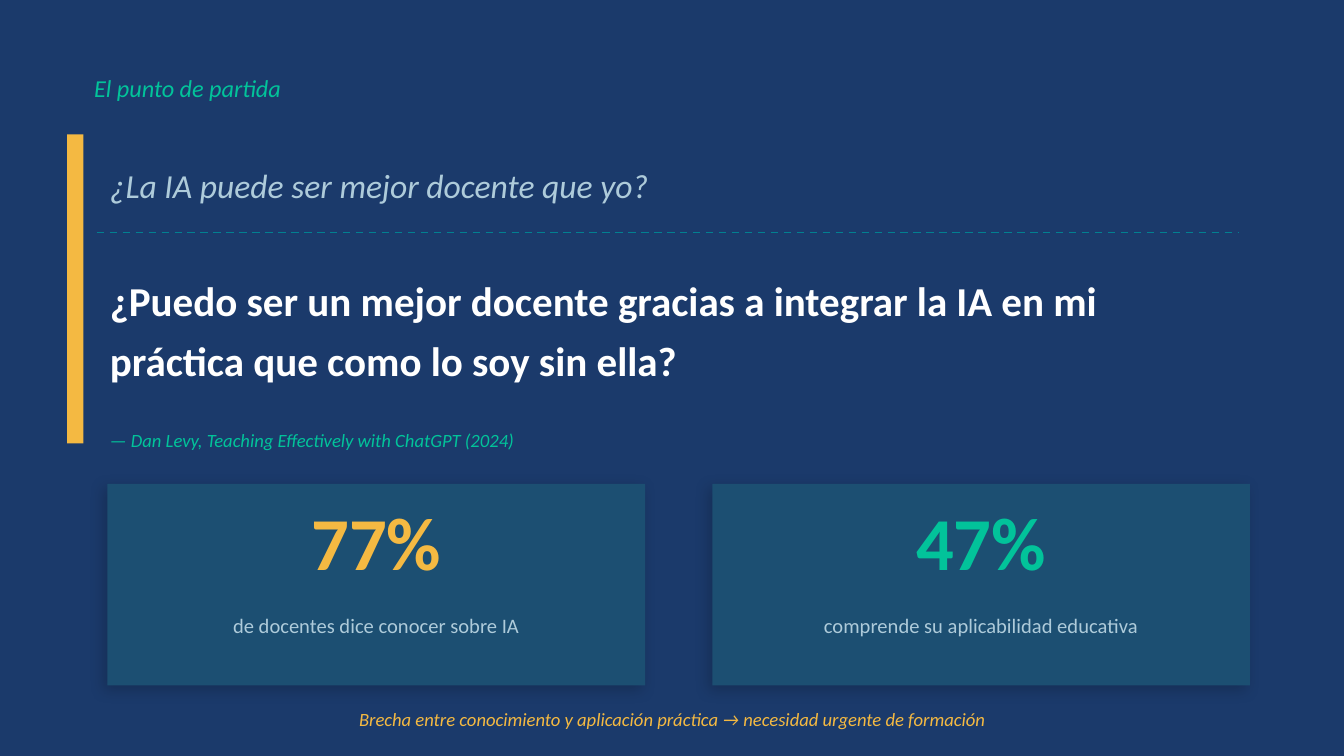
from dataclasses import dataclass

from lxml.etree import SubElement
from pptx import Presentation
from pptx.dml.color import RGBColor
from pptx.enum.dml import MSO_LINE
from pptx.enum.shapes import MSO_CONNECTOR, MSO_SHAPE
from pptx.enum.text import MSO_ANCHOR, MSO_AUTO_SIZE, PP_ALIGN
from pptx.oxml.ns import qn
from pptx.util import Pt


@dataclass(frozen=True)
class Theme:
    font: str = "Calibri"
    navy: str = "1B3A6B"
    card: str = "1C4F72"
    teal: str = "028090"
    green: str = "02C39A"
    amber: str = "F4B942"
    mist: str = "AECBDA"
    white: str = "FFFFFF"
    title_size: float = 13
    doubt_size: float = 18
    question_size: float = 22
    figure_size: float = 40
    label_size: float = 11
    note_size: float = 10


THEME = Theme()


def write(holder, text, size, color, bold=False, italic=False, align=PP_ALIGN.LEFT, spacing=None):
    frame = holder.text_frame
    frame.word_wrap = True
    frame.auto_size = MSO_AUTO_SIZE.NONE
    frame.vertical_anchor = MSO_ANCHOR.MIDDLE
    paragraph = frame.paragraphs[0]
    paragraph.alignment = align
    if spacing:
        paragraph.line_spacing = spacing
    run = paragraph.add_run()
    run.text = text
    run.font.name = THEME.font
    run.font.size = Pt(size)
    run.font.bold = bold
    run.font.italic = italic
    run.font.color.rgb = RGBColor.from_string(color)


def add_text(slide, left, top, width, height, text, size, color, **style):
    box = slide.shapes.add_textbox(Pt(left), Pt(top), Pt(width), Pt(height))
    write(box, text, size, color, **style)


def add_block(slide, left, top, width, height, color):
    block = slide.shapes.add_shape(MSO_SHAPE.RECTANGLE, Pt(left), Pt(top), Pt(width), Pt(height))
    block.shadow.inherit = False
    block.fill.solid()
    block.fill.fore_color.rgb = RGBColor.from_string(color)
    block.line.fill.background()
    return block


def cast_shadow(block):
    effects = block._element.spPr.find(qn("a:effectLst"))
    shadow = SubElement(effects, qn("a:outerShdw"), blurRad=str(Pt(8)), dist=str(Pt(3)),
                        dir=str(135 * 60000), algn="bl", rotWithShape="0")
    color = SubElement(shadow, qn("a:srgbClr"), val="000000")
    SubElement(color, qn("a:alpha"), val="18000")


def add_title(slide, left, top, width, height):
    title = slide.shapes.title
    title.left, title.top, title.width, title.height = Pt(left), Pt(top), Pt(width), Pt(height)
    write(title, "El punto de partida", THEME.title_size, THEME.green, italic=True)


def add_dashed_rule(slide, left, top, width):
    rule = slide.shapes.add_connector(
        MSO_CONNECTOR.STRAIGHT, Pt(left), Pt(top), Pt(left + width), Pt(top))
    rule.line.color.rgb = RGBColor.from_string(THEME.teal)
    rule.line.width = Pt(1)
    rule.line.dash_style = MSO_LINE.DASH
    SubElement(rule._element.spPr, qn("a:effectLst"))


def add_questions(slide, left, top, width, height):
    """Place the two questions and their source beside an accent bar."""
    indent = 15.84
    text_left, text_width = left + indent, width - indent
    add_block(slide, left, top, 8.64, height, THEME.amber)
    add_text(slide, text_left, top + 7.2, text_width, 39.6,
             "¿La IA puede ser mejor docente que yo?",
             THEME.doubt_size, THEME.mist, italic=True)
    add_dashed_rule(slide, text_left, top + 52.56, text_width)
    add_text(slide, text_left, top + 59.04, text_width, 86.4,
             "¿Puedo ser un mejor docente gracias a integrar la IA en mi "
             "práctica que como lo soy sin ella?",
             THEME.question_size, THEME.white, bold=True, spacing=1.2)
    add_text(slide, text_left, top + 151.2, text_width, 25.2,
             "— Dan Levy, Teaching Effectively with ChatGPT (2024)",
             THEME.note_size, THEME.green, italic=True)


def add_stat_card(slide, left, top, width, height, figure, label, color):
    cast_shadow(add_block(slide, left, top, width, height, THEME.card))
    add_text(slide, left, top + 3.6, width, height / 2, figure,
             THEME.figure_size, color, bold=True, align=PP_ALIGN.CENTER)
    add_text(slide, left, top + height / 2, width, height * 0.4, label,
             THEME.label_size, THEME.mist, align=PP_ALIGN.CENTER)


def add_stats(slide, left, top, width, height):
    stats = [
        ("77%", "de docentes dice conocer sobre IA", THEME.amber),
        ("47%", "comprende su aplicabilidad educativa", THEME.green),
    ]
    gap = 36
    card_width = (width - gap * (len(stats) - 1)) / len(stats)
    for column, stat in enumerate(stats):
        add_stat_card(slide, left + column * (card_width + gap), top, card_width, height, *stat)


def add_conclusion(slide, left, top, width, height):
    add_text(slide, left, top, width, height,
             "Brecha entre conocimiento y aplicación práctica → necesidad urgente de formación",
             THEME.note_size, THEME.amber, italic=True, align=PP_ALIGN.CENTER)


def main():
    deck = Presentation()
    deck.slide_width, deck.slide_height = Pt(720), Pt(405)
    slide = deck.slides.add_slide(deck.slide_layouts.get_by_name("Title Only"))
    slide.background.fill.solid()
    slide.background.fill.fore_color.rgb = RGBColor.from_string(THEME.navy)
    add_title(slide, 43.2, 28.8, 576, 36)
    add_questions(slide, 36, 72, 627.84, 165.6)
    add_stats(slide, 57.6, 259.2, 612, 108)
    add_conclusion(slide, 36, 374.4, 648, 21.6)
    deck.save("out.pptx")


if __name__ == "__main__":
    main()
